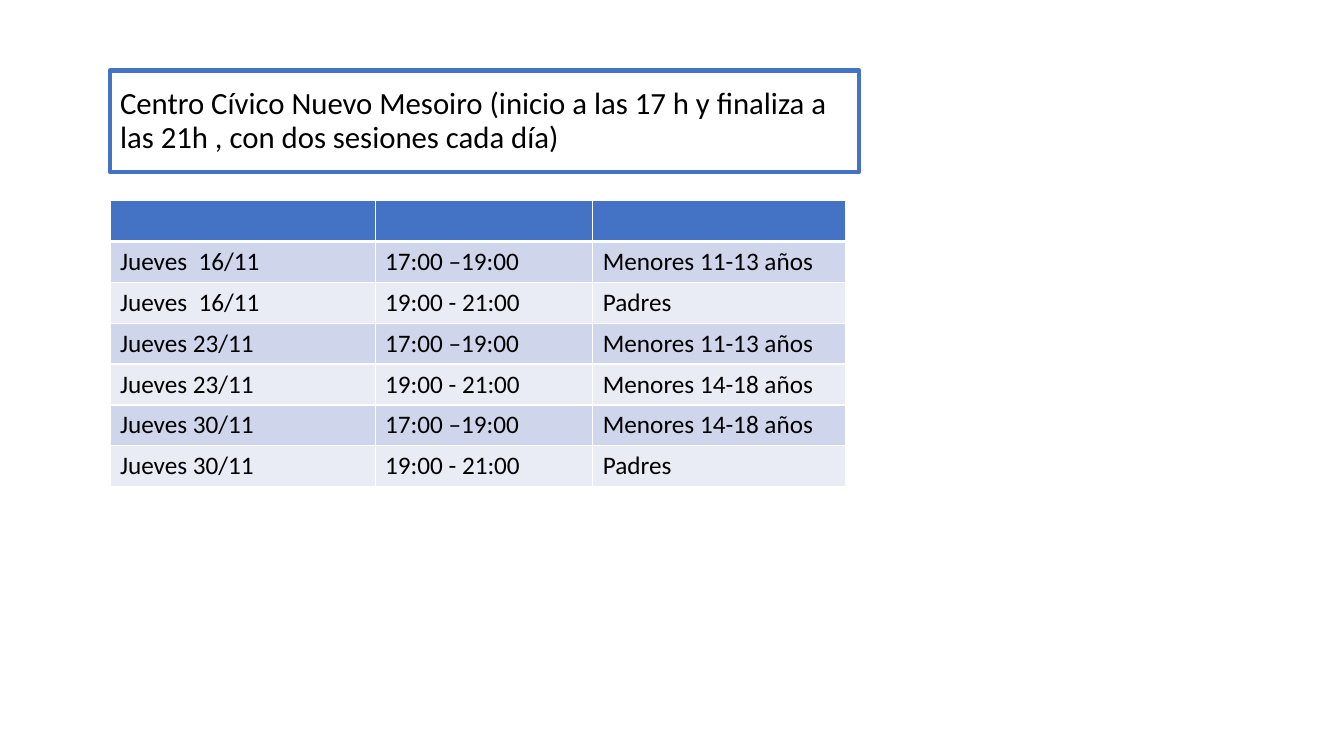
from lxml import etree
from pptx import Presentation
from pptx.dml.color import RGBColor
from pptx.enum.text import MSO_ANCHOR, MSO_AUTO_SIZE, PP_ALIGN
from pptx.oxml.ns import qn
from pptx.util import Inches, Pt

MIDDLE = MSO_ANCHOR.MIDDLE
NO_AUTOFIT = MSO_AUTO_SIZE.NONE
LEFT = PP_ALIGN.LEFT
TITLE_ONLY = 5

BLUE, WHITE, BLACK = "4472C4", "FFFFFF", "000000"
BANDS = ("CFD5EA", "E9EBF5")

VENUE = ("Centro Cívico Nuevo Mesoiro (inicio a las 17 h y finaliza a "
         "las 21h , con dos sesiones cada día)")
EARLY, LATE = "17:00 –19:00", "19:00 - 21:00"
YOUNGER, OLDER, PARENTS = "Menores 11-13 años", "Menores 14-18 años", "Padres"
SESSIONS = [
    ("Jueves  16/11", EARLY, YOUNGER),
    ("Jueves  16/11", LATE, PARENTS),
    ("Jueves 23/11", EARLY, YOUNGER),
    ("Jueves 23/11", LATE, OLDER),
    ("Jueves 30/11", EARLY, OLDER),
    ("Jueves 30/11", LATE, PARENTS),
]


def colour(value):
    return RGBColor.from_string(value)


def apply(target, values):
    for name, value in values.items():
        setattr(target, name, value)


class ScheduleSlide:
    font_name = "Calibri"

    def __init__(self, deck):
        self.width, self.height = deck.slide_width, deck.slide_height
        self.slide = deck.slides.add_slide(deck.slide_layouts[TITLE_ONLY])

    def across(self, percent):
        return round(self.width * percent / 100)

    def down(self, percent):
        return round(self.height * percent / 100)

    def put_text(self, frame, text, size):
        paragraph = frame.paragraphs[0]
        paragraph.alignment = LEFT
        run = paragraph.add_run()
        run.text = text
        apply(run.font, {"name": self.font_name, "size": Pt(size), "bold": False})
        run.font.color.rgb = colour(BLACK)
        return paragraph

    def title(self, text, left, top, width, height):
        heading = self.slide.shapes.title
        apply(heading, {"left": self.across(left), "top": self.down(top),
                        "width": self.across(width), "height": self.down(height)})
        heading.fill.solid()
        heading.fill.fore_color.rgb = colour(WHITE)
        heading.line.color.rgb = colour(BLUE)
        heading.line.width = Pt(3)
        apply(heading.text_frame, {"word_wrap": True, "auto_size": NO_AUTOFIT,
                                   "vertical_anchor": MIDDLE})
        self.put_text(heading.text_frame, text, 22).line_spacing = 0.9

    def borders(self, cell, top, bottom):
        properties = cell._tc.get_or_add_tcPr()
        for side, points in {"L": 1, "R": 1, "T": top, "B": bottom}.items():
            edge = etree.SubElement(properties, qn(f"a:ln{side}"), w=str(Pt(points)))
            fill = etree.SubElement(edge, qn("a:solidFill"))
            etree.SubElement(fill, qn("a:srgbClr"), val=WHITE)

    def table(self, sessions, left, top, columns, row_height):
        rows = [("",) * len(columns), *sessions]
        schedule = self.slide.shapes.add_table(
            len(rows), len(columns), self.across(left), self.down(top),
            self.across(sum(columns)), self.down(row_height * len(rows))).table
        for column, share in zip(schedule.columns, columns):
            column.width = self.across(share)
        for index, texts in enumerate(rows):
            schedule.rows[index].height = self.down(row_height)
            shade = BANDS[(index - 1) % 2] if index else BLUE
            for cell, text in zip(schedule.rows[index].cells, texts):
                self.borders(cell, 3 if index == 1 else 1, 1 if index else 3)
                cell.fill.solid()
                cell.fill.fore_color.rgb = colour(shade)
                if text:
                    self.put_text(cell.text_frame, text, 18)


def main():
    deck = Presentation()
    apply(deck, {"slide_width": Inches(13.33), "slide_height": Inches(7.5)})
    page = ScheduleSlide(deck)
    page.title(VENUE, left=8.18, top=9.33, width=55.74, height=13.47)
    page.table(SESSIONS, left=8.18, top=26.53,
               columns=(19.73, 16.2, 18.83), row_height=5.4)
    deck.save("out.pptx")


if __name__ == "__main__":
    main()
